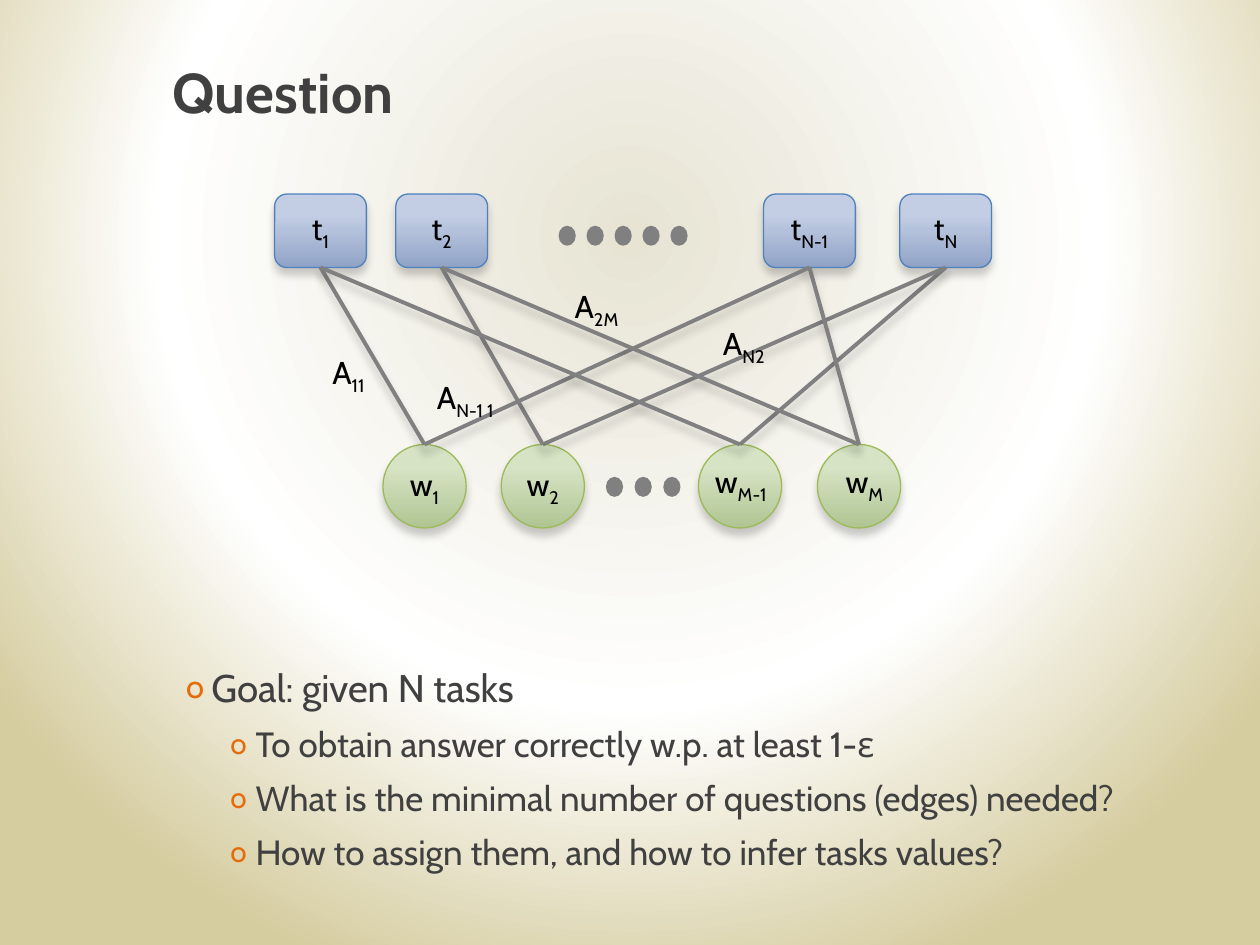
from pptx import Presentation
from pptx import util as u
from pptx.dml.color import RGBColor
from pptx.enum import shapes, text
from pptx.oxml import parse_xml
from pptx.oxml.ns import nsdecls

FONT = "Cabin"
COLORS = {
    "centre": "E7E4D4", "ring": "FFFFFF", "edge": "D5CC9F",
    "ink": "404040", "label": "000000", "bullet": "E46C0A", "grey": "808080",
    "task_light": "C3CEE4", "task_dark": "90A3C7", "task_line": "4F81BD",
    "worker_light": "D6E3C4", "worker_dark": "B0C592", "worker_line": "9BBB59",
}
# Horizontal centres and distances are percentages of the diagram box.
TASKS = {"1": 6.4, "2": 23.3, "N-1": 74.6, "N": 93.6}
WORKERS = {"1": 20.9, "2": 37.4, "M-1": 64.9, "M": 81.5}
EDGES = [("1", "1"), ("N", "M-1"), ("N", "2"), ("2", "2"),
         ("N-1", "M"), ("N-1", "1"), ("1", "M-1"), ("2", "M")]
# Base letter, subscript, left, top, width
LABELS = [("w", "M-1", 59.2, 78.5, 11.6), ("w", "M", 77.7, 78.5, 9.1),
          ("A", "11", 6.3, 45.7, 9.1), ("A", "N-1 1", 20.9, 53.2, 13.2),
          ("A", "N2", 60.8, 37, 10), ("A", "2M", 40.1, 26, 10.4)]
GOALS = [("Goal: given N tasks", 0),
         ("To obtain answer correctly w.p. at least 1-ε", 1),
         ("What is the minimal number of questions (edges) needed?", 1),
         ("How to assign them, and how to infer tasks values?", 1)]


def rgb(name):
    return RGBColor.from_string(COLORS[name])


def style_run(run, size, color):
    run.font.name = FONT
    run.font.size = u.Pt(size)
    run.font.color.rgb = rgb(color)


def write_symbol(frame, base, subscript, align):
    """Write a letter followed by a subscript."""
    paragraph = frame.paragraphs[0]
    paragraph.alignment = align
    for part in (base, subscript):
        run = paragraph.add_run()
        run.text = part
        style_run(run, 18, "label")
    run.font._element.set("baseline", "-25000")


def add_soft_shadow(shape):
    shape._element.spPr.append(parse_xml(
        f'<a:effectLst {nsdecls("a")}><a:outerShdw blurRad="{u.Pt(5)}" dist="{u.Pt(4)}" '
        'dir="5400000" rotWithShape="0"><a:srgbClr val="000000"><a:alpha val="20000"/>'
        '</a:srgbClr></a:outerShdw></a:effectLst>'))


def paint_background(slide):
    stops = "".join(
        f'<a:gs pos="{pos}000"><a:srgbClr val="{COLORS[name]}"/></a:gs>'
        for pos, name in ((0, "centre"), (60, "ring"), (100, "edge")))
    slide.element.cSld.insert(0, parse_xml(
        f'<p:bg {nsdecls("p", "a")}><p:bgPr><a:gradFill rotWithShape="1">'
        f'<a:gsLst>{stops}</a:gsLst><a:path path="circle">'
        '<a:fillToRect l="20000" t="10000" r="20000" b="60000"/></a:path></a:gradFill>'
        '<a:effectLst/></p:bgPr></p:bg>'))


def place_title(slide, left, top, width, height):
    title = slide.shapes.title
    title.left, title.top, title.width, title.height = left, top, width, height
    frame = title.text_frame
    frame.text = "Question"
    frame.vertical_anchor = text.MSO_ANCHOR.TOP
    frame.paragraphs[0].alignment = text.PP_ALIGN.LEFT
    run = frame.paragraphs[0].runs[0]
    style_run(run, 32, "ink")
    run.font.bold = True


def draw_diagram(slide, left, top, width, height):
    """Draw the bipartite graph of tasks and workers."""
    parts = slide.shapes.add_group_shape().shapes

    def area(x, y, w, h):
        return (int(left + width * x / 100), int(top + height * y / 100),
                int(width * w / 100), int(height * h / 100))

    def add_node(preset, kind, box):
        node = parts.add_shape(preset, *box)
        node.fill.gradient()
        node.fill.gradient_angle = 270
        for stop, shade, position in zip(node.fill.gradient_stops,
                                         ("light", "dark"), (0.28, 1)):
            stop.color.rgb = rgb(f"{kind}_{shade}")
            stop.position = position
        node.line.color.rgb = rgb(f"{kind}_line")
        node.line.width = u.Pt(0.75)
        add_soft_shadow(node)
        node.text_frame.vertical_anchor = text.MSO_ANCHOR.MIDDLE
        return node

    def add_dots(first, step, count, y):
        for i in range(count):
            dot = parts.add_shape(shapes.MSO_SHAPE.OVAL,
                                  *area(first + i * step - 1.2, y - 3, 2.4, 6))
            dot.fill.solid()
            dot.fill.fore_color.rgb = rgb("grey")
            dot.line.fill.background()
            dot.shadow.inherit = False

    tasks, workers = {}, {}
    for index, x in TASKS.items():
        tasks[index] = add_node(shapes.MSO_SHAPE.ROUNDED_RECTANGLE, "task",
                                area(x - 6.4, 0, 12.8, 22))
        write_symbol(tasks[index].text_frame, "t", index, text.PP_ALIGN.CENTER)
    add_dots(40.8, 3.9, 5, 12.5)
    for index, x in WORKERS.items():
        workers[index] = add_node(shapes.MSO_SHAPE.OVAL, "worker",
                                  area(x - 5.8, 75, 11.6, 25))
        if index.isdigit():
            write_symbol(workers[index].text_frame, "w", index, text.PP_ALIGN.CENTER)
    add_dots(47.4, 4, 3, 87.7)

    for task, worker in EDGES:
        edge = parts.add_connector(shapes.MSO_CONNECTOR.STRAIGHT, 0, 0, 0, 0)
        edge.begin_connect(tasks[task], 2)
        edge.end_connect(workers[worker], 0)
        edge.line.color.rgb = rgb("grey")
        edge.line.width = u.Pt(2.25)
        add_soft_shadow(edge)

    for base, subscript, x, y, w in LABELS:
        frame = parts.add_textbox(*area(x, y, w, 15)).text_frame
        frame.word_wrap = False
        align = text.PP_ALIGN.CENTER if base == "w" else text.PP_ALIGN.LEFT
        write_symbol(frame, base, subscript, align)


def list_goals(slide, left, top, width, height):
    frame = slide.shapes.add_textbox(left, top, width, height).text_frame
    frame.word_wrap = True
    for i, (goal, level) in enumerate(GOALS):
        paragraph = frame.add_paragraph() if i else frame.paragraphs[0]
        size = 22 - 2 * level
        paragraph.text = goal
        paragraph.level = level
        paragraph.space_before = u.Pt(size * 0.2)
        paragraph.space_after = u.Pt(3)
        style_run(paragraph.runs[0], size, "ink")
        props = paragraph._p.get_or_add_pPr()
        props.set("marL", str(u.Inches(0.25 + 0.35 * level)))
        props.set("indent", str(u.Inches(-0.2)))
        for bullet in (f'buClr {nsdecls("a")}><a:srgbClr val="{COLORS["bullet"]}"/></a:buClr>',
                       f'buSzPct {nsdecls("a")} val="85000"/>',
                       f'buFont {nsdecls("a")} typeface="{FONT}"/>',
                       f'buChar {nsdecls("a")} char="o"/>'):
            props.append(parse_xml("<a:" + bullet))


def main():
    deck = Presentation()
    deck.slide_width, deck.slide_height = u.Inches(10), u.Inches(7.5)
    slide = deck.slides.add_slide(deck.slide_layouts[5])
    paint_background(slide)
    place_title(slide, *map(u.Inches, (1.27, 0.41, 7.12, 1.25)))
    list_goals(slide, *map(u.Inches, (1.33, 5.22, 8.17, 2.28)))
    draw_diagram(slide, *map(u.Inches, (2.18, 1.54, 5.69, 2.65)))
    deck.save("out.pptx")


if __name__ == "__main__":
    main()
